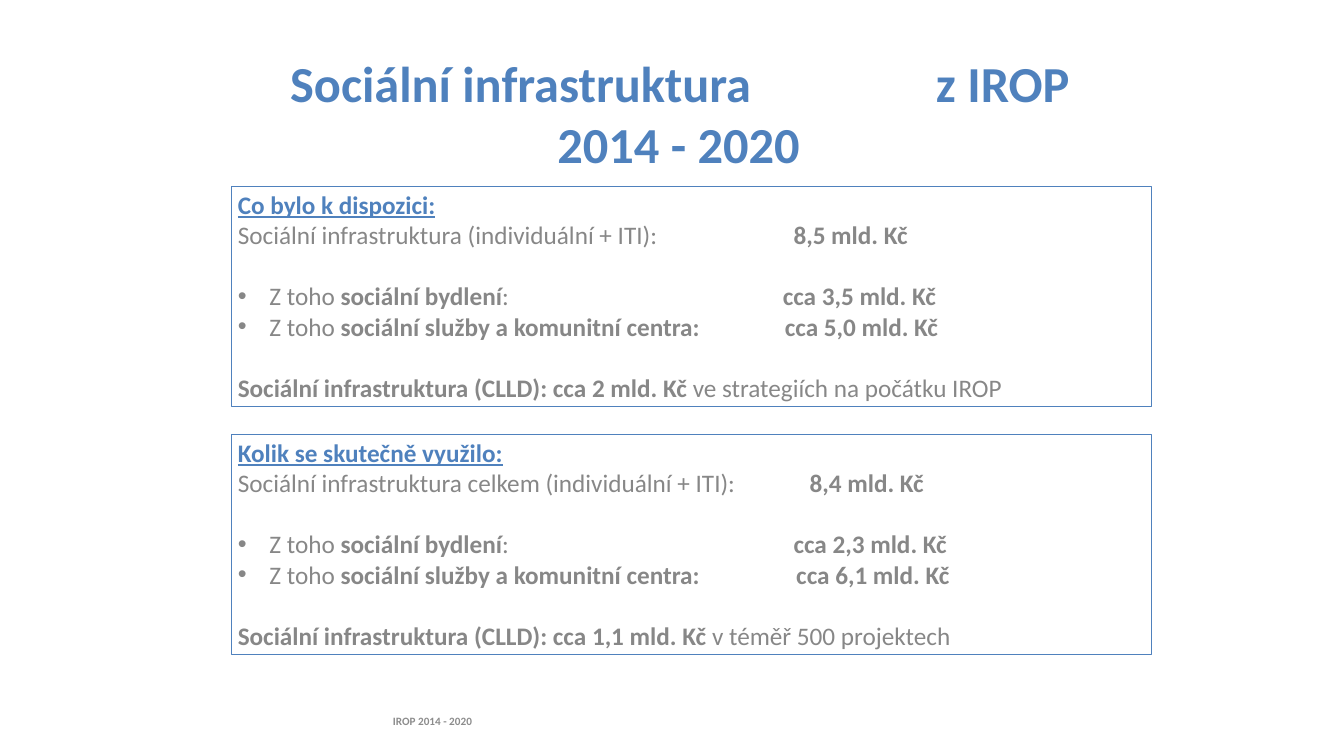
from pptx import Presentation
from pptx.dml.color import RGBColor
from pptx.enum.shapes import MSO_SHAPE
from pptx.enum.text import MSO_ANCHOR, PP_ALIGN
from pptx.oxml.ns import qn
from pptx.util import Inches, Pt
from lxml import etree

BLUE = RGBColor(0x4F, 0x81, 0xBD)
GREY = RGBColor(0x87, 0x87, 0x87)
FOOTER_GREY = RGBColor(0x8C, 0x8C, 0x8C)
CENTER, LEFT, JUSTIFY = PP_ALIGN.CENTER, PP_ALIGN.LEFT, PP_ALIGN.JUSTIFY
TOP, MIDDLE = MSO_ANCHOR.TOP, MSO_ANCHOR.MIDDLE
RECTANGLE = MSO_SHAPE.RECTANGLE

FONT = "Calibri"
BODY_SIZE = 27
LINE_GAP = 33
BULLET_INDENT = 0.47

TITLE = ("Sociální infrastruktura\tz IROP", "2014 - 2020")
FOOTER = "IROP 2014 - 2020"

# Amounts are (text, distance from the left text edge in inches).
PANELS = [
    {
        "heading": "Co bylo k dispozici:",
        "total": ("Sociální infrastruktura (individuální + ITI):", "8,5 mld. Kč", 8.27),
        "housing": ("cca 3,5 mld. Kč", 8.11),
        "services": ("cca 5,0 mld. Kč", 8.14),
        "clld": ("cca 2 mld. Kč", "ve strategiích na počátku IROP"),
    },
    {
        "heading": "Kolik se skutečně využilo:",
        "total": ("Sociální infrastruktura celkem (individuální + ITI):", "8,4 mld. Kč", 8.51),
        "housing": ("cca 2,3 mld. Kč", 8.27),
        "services": ("cca 6,1 mld. Kč", 8.31),
        "clld": ("cca 1,1 mld. Kč", "v téměř 500 projektech"),
    },
]
PANEL_LEFT, PANEL_TOP, PANEL_WIDTH, PANEL_HEIGHT = 3.44, 2.77, 13.69, 3.28
PANEL_STEP = 3.69


def prepare(shape, anchor=TOP):
    frame = shape.text_frame
    frame.word_wrap = True
    frame.vertical_anchor = anchor
    return frame


def write(frame, spans, first=False, size=BODY_SIZE, color=GREY, align=JUSTIFY,
          underline=False, before=0, bullet=False, margin=0, tab=None):
    """Add a paragraph made of (text, bold) spans."""
    para = frame.paragraphs[0] if first else frame.add_paragraph()
    para.alignment = align
    properties = para._p.get_or_add_pPr()
    if bullet:
        margin = BULLET_INDENT
        properties.set("indent", str(-Inches(BULLET_INDENT)))
        etree.SubElement(properties, qn("a:buFont"), typeface="Arial")
        etree.SubElement(properties, qn("a:buChar"), char="•")
    if margin:
        properties.set("marL", str(Inches(margin)))
    if tab:
        tabs = etree.SubElement(properties, qn("a:tabLst"))
        etree.SubElement(tabs, qn("a:tab"), pos=str(Inches(tab)), algn="l")
    if before:
        para.space_before = Pt(before)
    for text, bold in spans:
        span = para.add_run()
        span.text = text
        span.font.name = FONT
        span.font.size = Pt(size)
        span.font.bold = bold
        span.font.underline = underline
        span.font.color.rgb = color


def add_panel(page, top, panel):
    box = page.shapes.add_shape(RECTANGLE, Inches(PANEL_LEFT), Inches(top),
                                Inches(PANEL_WIDTH), Inches(PANEL_HEIGHT))
    box.shadow.inherit = False
    box.fill.background()
    box.line.color.rgb = BLUE
    box.line.width = Pt(0.75)
    frame = prepare(box)

    label, total, total_tab = panel["total"]
    housing, housing_tab = panel["housing"]
    services, services_tab = panel["services"]
    amount, remark = panel["clld"]
    write(frame, [(panel["heading"], True)], first=True, color=BLUE, underline=True)
    write(frame, [(label + "\t", False), (total, True)], tab=total_tab)
    write(frame, [("Z toho ", False), ("sociální bydlení", True), (":\t", False),
                  (housing, True)], bullet=True, before=LINE_GAP, tab=housing_tab)
    write(frame, [("Z toho ", False),
                  ("sociální služby a komunitní centra:\t" + services, True)],
          bullet=True, tab=services_tab)
    write(frame, [(f"Sociální infrastruktura (CLLD): {amount} ", True), (remark, False)],
          before=LINE_GAP)


deck = Presentation()
deck.slide_width, deck.slide_height = Inches(20), Inches(11.25)
page = deck.slides.add_slide(deck.slide_layouts[6])

title = prepare(page.shapes.add_textbox(Inches(4.17), Inches(0.73), Inches(11.86), Inches(1.92)))
write(title, [(TITLE[0], True)], first=True, size=54, color=BLUE, align=LEFT,
      margin=0.05, tab=9.61)
write(title, [(TITLE[1], True)], size=54, color=BLUE, align=CENTER)

for index, panel in enumerate(PANELS):
    add_panel(page, PANEL_TOP + index * PANEL_STEP, panel)

footer = prepare(page.shapes.add_textbox(Inches(1.04), Inches(10.43), Inches(10.79), Inches(0.6)),
                 MIDDLE)
write(footer, [(FOOTER, True)], first=True, size=12, color=FOOTER_GREY, align=CENTER)

deck.save("out.pptx")
